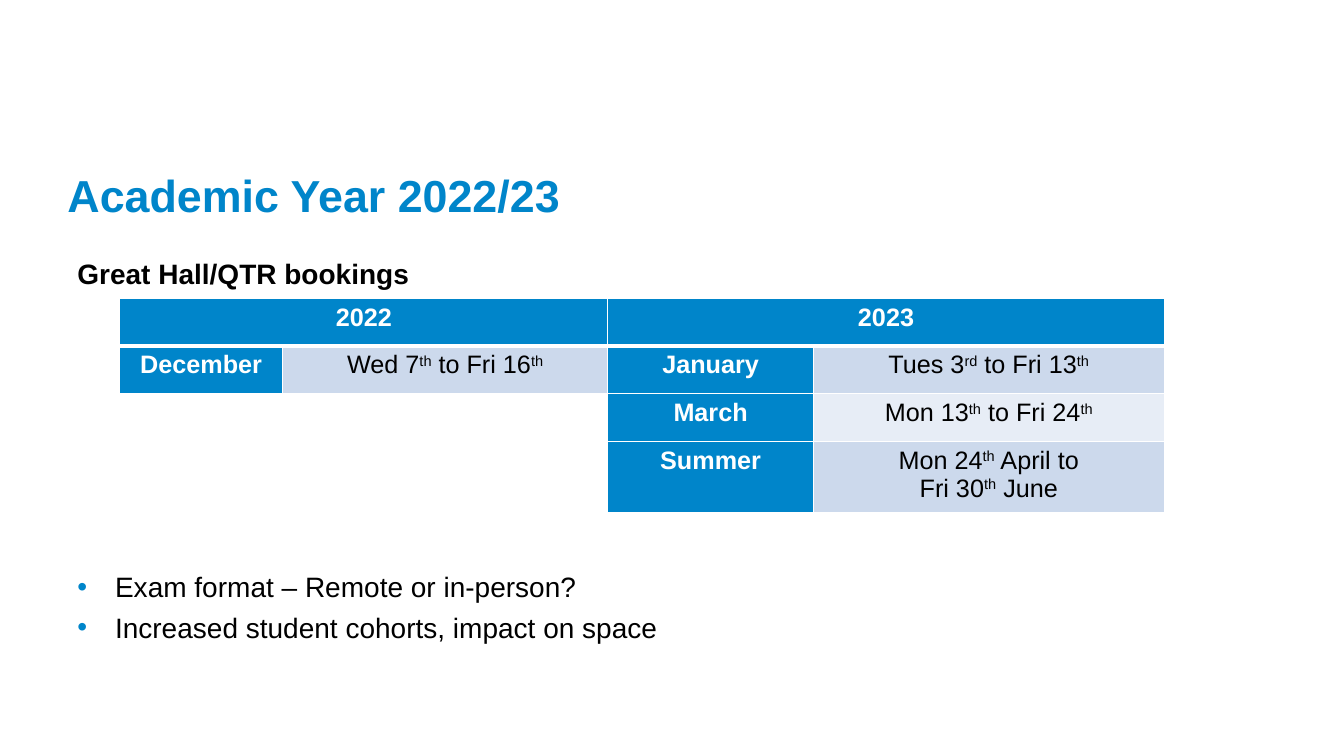
from dataclasses import dataclass

from lxml import etree
from pptx import Presentation
from pptx.dml.color import RGBColor
from pptx.enum.text import MSO_ANCHOR, MSO_AUTO_SIZE, PP_ALIGN
from pptx.oxml.ns import qn
from pptx.util import Cm, Pt

LEFT, CENTER = PP_ALIGN.LEFT, PP_ALIGN.CENTER
MIDDLE = MSO_ANCHOR.MIDDLE
NO_FIT = MSO_AUTO_SIZE.NONE

TITLE = "Academic Year 2022/23"
HEADING = "Great Hall/QTR bookings"
POINTS = [
    "Exam format – Remote or in-person?",
    "Increased student cohorts, impact on space",
]
ROWS = [
    ["2022", "", "2023", ""],
    ["December", "Wed 7^th^ to Fri 16^th", "January", "Tues 3^rd^ to Fri 13^th"],
    ["", "", "March", "Mon 13^th^ to Fri 24^th"],
    ["", "", "Summer", "Mon 24^th^ April to\nFri 30^th^ June"],
]
MERGES = [((0, 0), (0, 1)), ((0, 2), (0, 3)), ((2, 0), (3, 0)), ((2, 1), (3, 1))]
WIDTHS = [4.1, 8.2, 5.18, 8.84]
HEIGHTS = [1.2, 1.2, 1.2, 1.8]


@dataclass(frozen=True)
class Theme:
    """Colours, font and type sizes of the slide."""

    font: str = "Arial"
    blue: str = "0085CA"
    black: str = "000000"
    white: str = "FFFFFF"
    bands: tuple = ("E7EDF6", "CCD9EC")
    title: int = 32
    body: int = 20
    cell: int = 18


THEME = Theme()


def style(para, size, color, bold=False, align=LEFT):
    """Set the font and alignment of a paragraph."""
    para.alignment = align
    font = para.font
    font.name, font.size, font.bold = THEME.font, Pt(size), bold
    font.color.rgb = RGBColor.from_string(color)


def add_bullet(para):
    """Give a paragraph a blue bullet with a hanging indent."""
    props = para._p.get_or_add_pPr()
    props.set("marL", str(Cm(0.95)))
    props.set("indent", str(-Cm(0.95)))
    tint = etree.SubElement(props, qn("a:buClr"))
    etree.SubElement(tint, qn("a:srgbClr"), val=THEME.blue)
    etree.SubElement(props, qn("a:buFont"), typeface=THEME.font)
    etree.SubElement(props, qn("a:buChar"), char="•")


def add_edges(cell, base):
    """Draw white borders, the bottom one at the given width."""
    props = cell._tc.get_or_add_tcPr()
    widths = {"a:lnL": 1, "a:lnR": 1, "a:lnT": 1, "a:lnB": base}
    for spot, (tag, width) in enumerate(widths.items()):
        line = etree.Element(qn(tag), w=str(Pt(width)))
        fill = etree.SubElement(line, qn("a:solidFill"))
        etree.SubElement(fill, qn("a:srgbClr"), val=THEME.white)
        props.insert(spot, line)


def fill_cell(cell, text, row, col):
    """Write and colour one table cell; ^ toggles superscript."""
    head = row == 0 or col % 2 == 0
    if text:
        cell.fill.solid()
        shade = THEME.blue if head else THEME.bands[row % 2]
        cell.fill.fore_color.rgb = RGBColor.from_string(shade)
    else:
        cell.fill.background()
    add_edges(cell, 3 if row == 0 else 1)
    frame = cell.text_frame
    for spot, line in enumerate(text.split("\n")):
        para = frame.add_paragraph() if spot else frame.paragraphs[0]
        color = THEME.white if head else THEME.black
        style(para, THEME.cell, color, head, CENTER)
        for part, words in enumerate(line.split("^")):
            run = para.add_run()
            run.text = words
            if part % 2:
                run._r.get_or_add_rPr().set("baseline", "30000")


def add_title(slide):
    """Place and format the title."""
    title = slide.shapes.title
    title.left, title.top = Cm(1.7), Cm(4.14)
    title.width, title.height = Cm(30.48), Cm(1.42)
    frame = title.text_frame
    frame.text = TITLE
    frame.auto_size, frame.vertical_anchor = NO_FIT, MIDDLE
    frame.margin_left = frame.margin_right = frame.margin_bottom = 0
    frame.margin_top = Cm(0.13)
    style(frame.paragraphs[0], THEME.title, THEME.blue, True)


def add_body(slide):
    """Add the heading above the table and the points below it."""
    box = slide.shapes.add_textbox(Cm(1.7), Cm(6.33), Cm(29.85), Cm(11.27))
    frame = box.text_frame
    frame.word_wrap = True
    frame.text = HEADING
    style(frame.paragraphs[0], THEME.body, THEME.black, True)
    for spot, text in enumerate(POINTS):
        para = frame.add_paragraph()
        para.text = text
        para.space_before = Pt(5 if spot else 200)
        add_bullet(para)
        style(para, THEME.body, THEME.black)


def add_dates(slide):
    """Add the table of booking dates."""
    size = len(ROWS), len(WIDTHS)
    wide, high = Cm(sum(WIDTHS)), Cm(sum(HEIGHTS))
    table = slide.shapes.add_table(*size, Cm(3.02), Cm(7.52), wide, high).table
    table.first_row = table.horz_banding = False
    for col, width in zip(table.columns, WIDTHS):
        col.width = Cm(width)
    for row, height in zip(table.rows, HEIGHTS):
        row.height = Cm(height)
    for row, texts in enumerate(ROWS):
        for col, text in enumerate(texts):
            fill_cell(table.cell(row, col), text, row, col)
    for start, end in MERGES:
        table.cell(*start).merge(table.cell(*end))


def main():
    """Build and save the slide."""
    deck = Presentation()
    deck.slide_width, deck.slide_height = Cm(33.87), Cm(19.05)
    slide = deck.slides.add_slide(deck.slide_layouts[5])
    add_title(slide)
    add_body(slide)
    add_dates(slide)
    deck.save("out.pptx")


if __name__ == "__main__":
    main()
